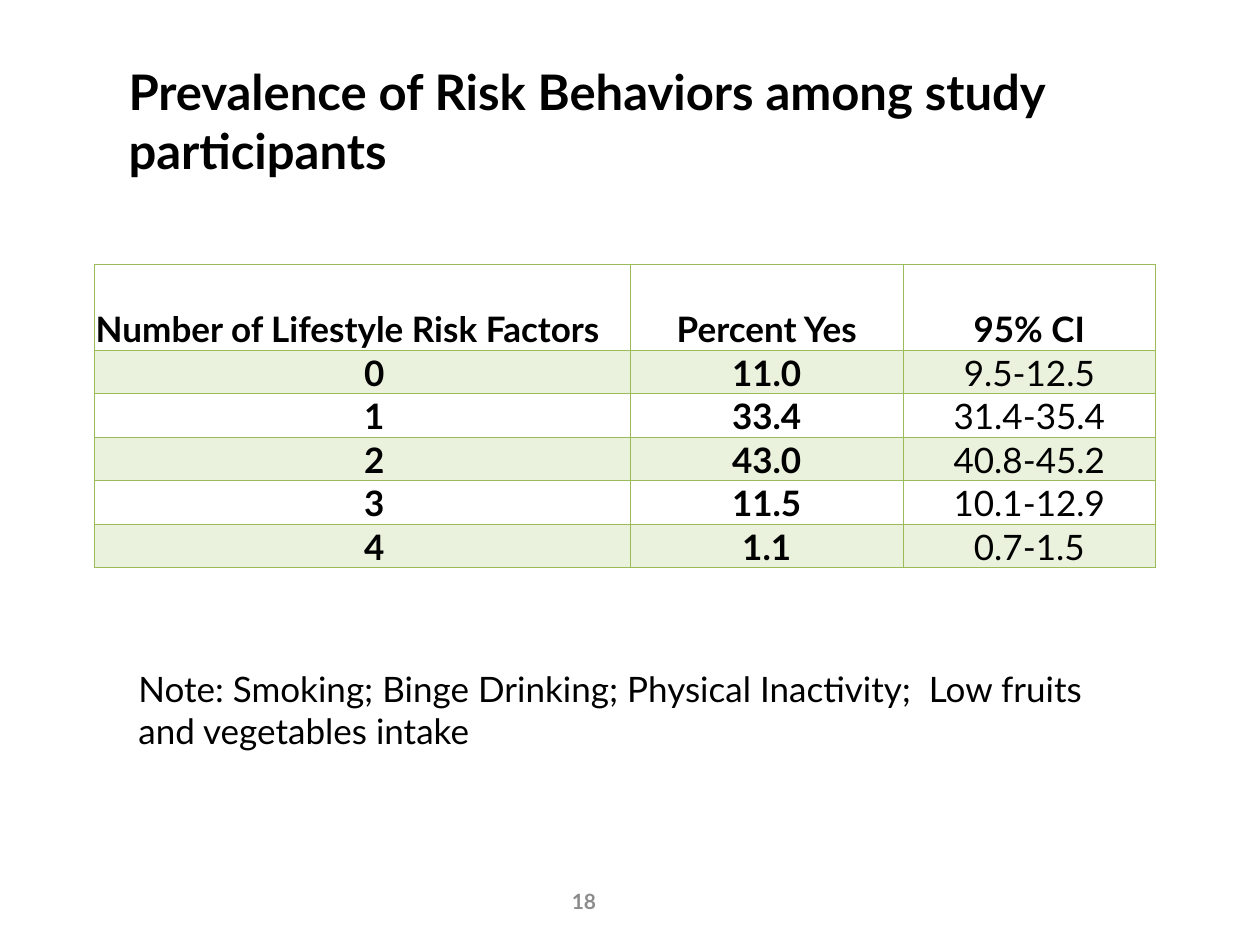
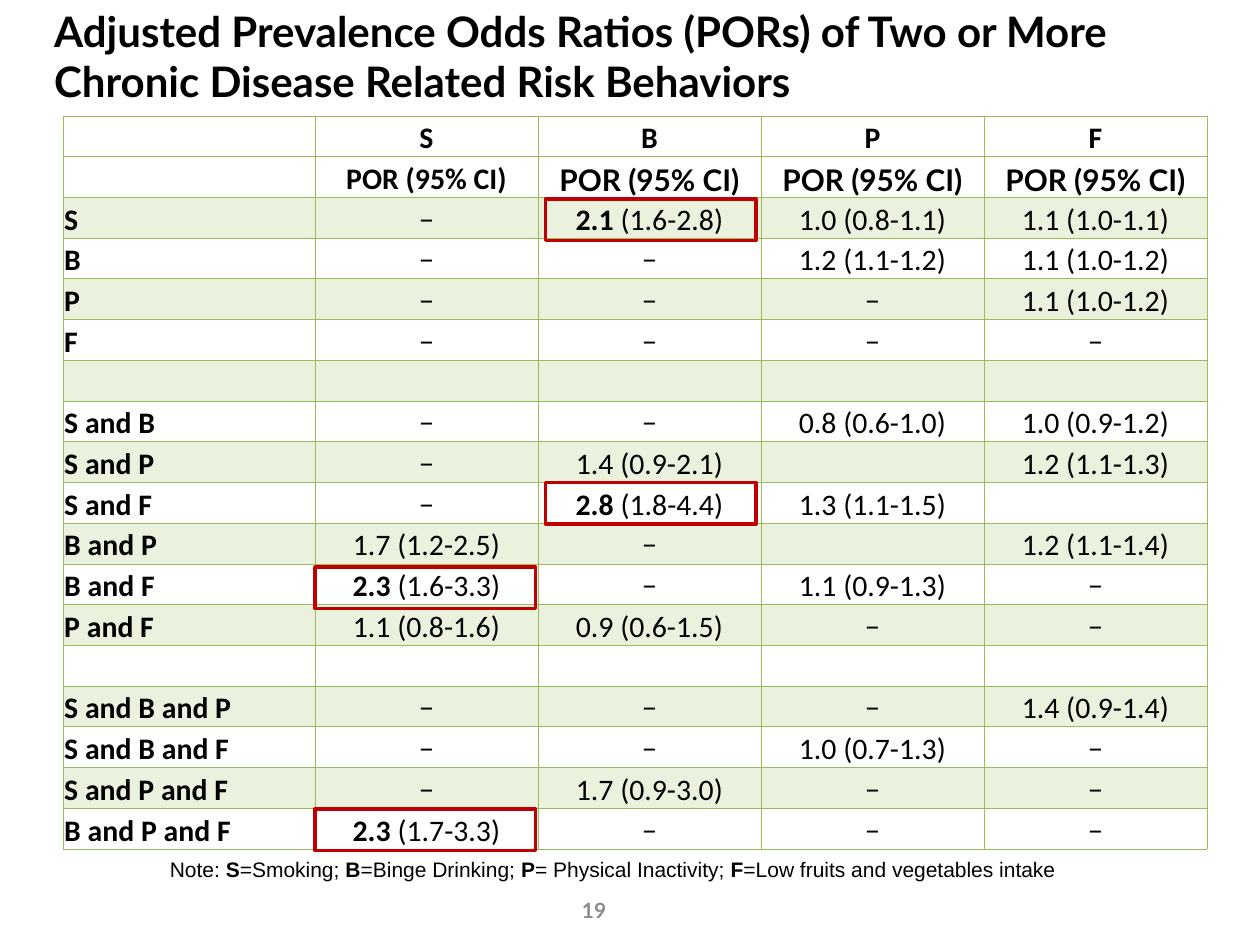
from lxml.etree import SubElement
from pptx import Presentation
from pptx.dml.color import RGBColor
from pptx.enum.shapes import MSO_SHAPE
from pptx.enum.text import MSO_ANCHOR, MSO_AUTO_SIZE, PP_ALIGN
from pptx.oxml.ns import qn
from pptx.util import Inches, Pt

BLACK, GRAY, GREEN, BAND, RED = "000000", "8C8C8C", "9BBB59", "EAF1DD", "C00000"
DASH = "−"


def rgb(hex_color):
    return RGBColor.from_string(hex_color)


def add_runs(p, text, size, font, color=BLACK):
    """Add text run by run; parts between asterisks are bold."""
    for i, part in enumerate(text.split("*")):
        if part:
            r = p.add_run()
            r.text = part
            r.font.size = Pt(size)
            r.font.name = font
            r.font.bold = i % 2 == 1
            r.font.color.rgb = rgb(color)


def set_borders(cell, top, bottom):
    tc_pr = cell._tc.get_or_add_tcPr()
    for tag, width in (("lnL", 0.5), ("lnR", 0.5), ("lnT", top), ("lnB", bottom)):
        ln = SubElement(tc_pr, qn(f"a:{tag}"), w=str(Pt(width)))
        fill = SubElement(ln, qn("a:solidFill"))
        SubElement(fill, qn("a:srgbClr"), val=GREEN)


class Deck:
    def __init__(self):
        self.font = "Lato"
        self.prs = Presentation()
        self.prs.slide_width, self.prs.slide_height = Inches(10), Inches(7.5)
        self.s = None

    def slide(self, title, box, size):
        self.s = self.prs.slides.add_slide(self.prs.slide_layouts[5])
        sp = self.s.shapes.title
        sp.left, sp.top, sp.width, sp.height = map(Inches, box)
        tf = sp.text_frame
        tf.auto_size = MSO_AUTO_SIZE.NONE
        tf.vertical_anchor = MSO_ANCHOR.MIDDLE
        p = tf.paragraphs[0]
        p.alignment = PP_ALIGN.LEFT
        add_runs(p, f"*{title}*", size, self.font)

    def text(self, text, box, size, font=None, color=BLACK,
             align=PP_ALIGN.LEFT, anchor=MSO_ANCHOR.TOP):
        tf = self.s.shapes.add_textbox(*map(Inches, box)).text_frame
        tf.word_wrap = True
        tf.vertical_anchor = anchor
        p = tf.paragraphs[0]
        p.alignment = align
        add_runs(p, text, size, font or self.font, color)

    def page_number(self, number, left, top):
        self.text(f"*{number}*", (left, top, 2.33, 0.4), 12, color=GRAY,
                  align=PP_ALIGN.RIGHT, anchor=MSO_ANCHOR.MIDDLE)

    def table(self, rows, left, top, widths, heights, size, headers, left_cells,
              font=None, lato_cells=()):
        """Draw a grid whose body rows are banded below the header rows."""
        frame = self.s.shapes.add_table(
            len(rows), len(widths), Inches(left), Inches(top),
            Inches(sum(widths)), Inches(sum(heights)))
        tbl = frame.table
        tbl.first_row = tbl.horz_banding = False
        for col, width in zip(tbl.columns, widths):
            col.width = Inches(width)
        for r, (row, height) in enumerate(zip(rows, heights)):
            tbl.rows[r].height = Inches(height)
            for c, text in enumerate(row):
                cell = tbl.cell(r, c)
                is_left = (r, c) in left_cells
                indent = 0.2 if c == 0 and not is_left else 0.01
                cell.margin_left = Inches(indent)
                cell.margin_right = cell.margin_top = Inches(0.01)
                cell.margin_bottom = 0
                cell.vertical_anchor = MSO_ANCHOR.BOTTOM
                set_borders(cell, 1 if 0 < r <= headers else 0.5,
                            1 if r < headers else 0.5)
                if r >= headers and (r - headers) % 2 == 0:
                    cell.fill.solid()
                    cell.fill.fore_color.rgb = rgb(BAND)
                else:
                    cell.fill.background()
                p = cell.text_frame.paragraphs[0]
                p.alignment = PP_ALIGN.LEFT if is_left else PP_ALIGN.CENTER
                cell_font = self.font if (r, c) in lato_cells else font or self.font
                add_runs(p, text, size, cell_font)

    def highlight(self, left, top, width):
        sp = self.s.shapes.add_shape(MSO_SHAPE.RECTANGLE, Inches(left), Inches(top),
                                     Inches(width), Inches(0.33))
        sp.shadow.inherit = False
        sp.fill.background()
        sp.line.color.rgb = rgb(RED)
        sp.line.width = Pt(2)


def prevalence_slide(deck):
    deck.slide("Prevalence of Risk Behaviors among study participants",
               (0.92, 0.58, 8.25, 0.75), 28)
    prevalence = [("11.0", "9.5-12.5"), ("33.4", "31.4-35.4"), ("43.0", "40.8-45.2"),
                  ("11.5", "10.1-12.9"), ("1.1", "0.7-1.5")]
    rows = [("*Number of Lifestyle Risk Factors*", "*Percent Yes*", "*95% CI*")]
    rows += [(f"*{n}*", f"*{percent}*", ci) for n, (percent, ci) in enumerate(prevalence)]
    deck.table(rows, 0.75, 2.1, [4.25, 2.17, 2], [0.68] + [0.34] * 5, 20,
               headers=1, left_cells={(0, 0)})
    deck.page_number(18, 2.5, 6.95)
    deck.text("Note: Smoking; Binge Drinking; Physical Inactivity;  Low fruits and "
              "vegetables intake", (1, 5.25, 8, 0.77), 20)


def odds_ratio_slide(deck):
    deck.slide("Adjusted Prevalence Odds Ratios (PORs) of Two or More Chronic Disease "
               "Related Risk Behaviors", (0.33, 0, 9.42, 0.88), 24)
    blank = [""] * 5
    rows = [
        ["", "*S*", "*B*", "*P*", "*F*"],
        [""] + ["*POR (95% CI)*"] * 4,
        ["*S*", DASH, "*2.1* (1.6-2.8)", "1.0 (0.8-1.1)", "1.1 (1.0-1.1)"],
        ["*B*", DASH, DASH, "1.2 (1.1-1.2)", "1.1 (1.0-1.2)"],
        ["*P*", DASH, DASH, DASH, "1.1 (1.0-1.2)"],
        ["*F*", DASH, DASH, DASH, DASH],
        blank,
        ["*S and B*", DASH, DASH, "0.8 (0.6-1.0)", "1.0 (0.9-1.2)"],
        ["*S and P*", DASH, "1.4 (0.9-2.1)", "", "1.2 (1.1-1.3)"],
        ["*S and F*", DASH, "*2.8* (1.8-4.4)", "1.3 (1.1-1.5)", ""],
        ["*B and P*", "1.7 (1.2-2.5)", DASH, "", "1.2 (1.1-1.4)"],
        ["*B and F*", "*2.3* (1.6-3.3)", DASH, "1.1 (0.9-1.3)", DASH],
        ["*P and F*", "1.1 (0.8-1.6)", "0.9 (0.6-1.5)", DASH, DASH],
        blank,
        ["*S and B and P*", DASH, DASH, DASH, "1.4 (0.9-1.4)"],
        ["*S and B and F*", DASH, DASH, "1.0 (0.7-1.3)", DASH],
        ["*S and P and F*", DASH, "1.7 (0.9-3.0)", DASH, DASH],
        ["*B and P and F*", "*2.3* (1.7-3.3)", DASH, DASH, DASH],
    ]
    count = len(rows)
    deck.table(rows, 0.5, 0.92, [2] + [1.77] * 4, [5.82 / count] * count, 17,
               headers=2, left_cells={(r, 0) for r in range(count)},
               font="Calibri", lato_cells={(1, c) for c in (2, 3, 4)})
    deck.text("Note: *S*=Smoking; *B*=Binge Drinking; *P*= Physical Inactivity; "
              "*F*=Low fruits and vegetables intake", (1.25, 6.75, 8, 0.3), 12, "Arial")
    for left, top, width in ((4.33, 1.58, 1.67), (4.33, 3.83, 1.67),
                             (2.5, 4.5, 1.75), (2.5, 6.42, 1.75)):
        deck.highlight(left, top, width)
    deck.page_number(19, 2.58, 7.02)


def main():
    deck = Deck()
    prevalence_slide(deck)
    odds_ratio_slide(deck)
    deck.prs.save("out.pptx")


if __name__ == "__main__":
    main()
